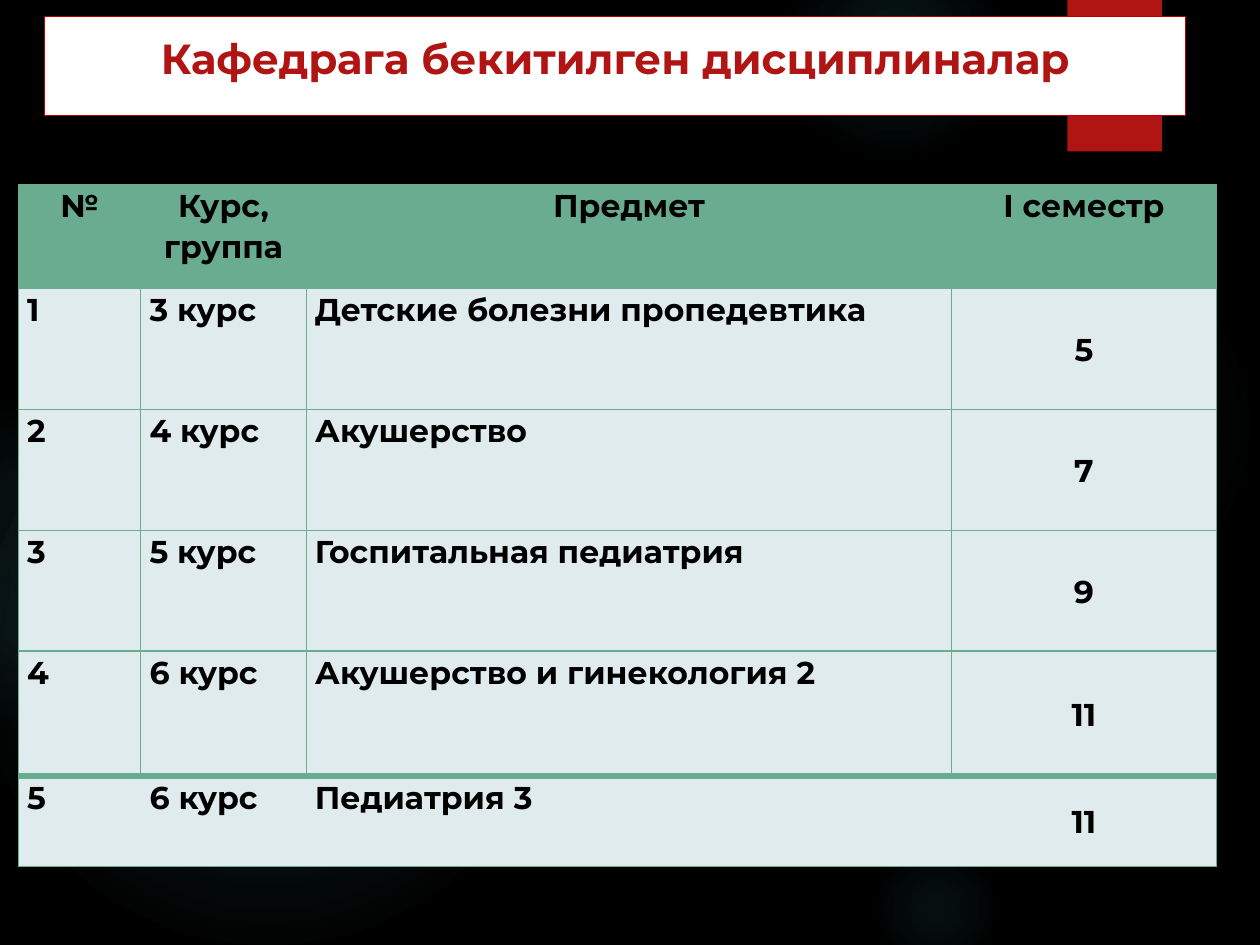
from dataclasses import dataclass

from lxml import etree
from pptx import Presentation
from pptx.dml.color import RGBColor
from pptx.enum.shapes import MSO_SHAPE
from pptx.enum.text import MSO_ANCHOR, MSO_AUTO_SIZE, PP_ALIGN
from pptx.oxml.ns import qn
from pptx.util import Pt

OVAL, RECT = MSO_SHAPE.OVAL, MSO_SHAPE.RECTANGLE
TOP, MIDDLE = MSO_ANCHOR.TOP, MSO_ANCHOR.MIDDLE
LEFT, CENTER = PP_ALIGN.LEFT, PP_ALIGN.CENTER
TITLE_ONLY = 5
NO_STYLE = "{2D5ABB26-0587-4C30-8999-92F81FD0307C}"


@dataclass(frozen=True)
class Theme:
    """Colours, font and type sizes of the slide."""
    back: str = "000000"
    glow: str = "50B9C1"
    red: str = "B01513"
    frame: str = "C00000"
    white: str = "FFFFFF"
    ink: str = "000000"
    green: str = "6AAC90"
    pale: str = "DFEBEC"
    font: str = "Montserrat"
    title_size: float = 24
    cell_size: float = 18
    thin: float = 0.75
    thick: float = 4


T = Theme()

GLOWS = [
    (496, 132, 222, [(0, 7), (36, 6), (69, 0)]),
    (448, -36, 126, [(0, 14), (36, 7), (73, 0)]),
    (496, 480, 78, [(0, 9), (36, 5), (66, 0)]),
    (-12, 210, 330, [(0, 11), (36, 10), (75, 0)]),
    (-66, 228, 186, [(0, 8), (36, 8), (72, 0)]),
]
COLS = [70, 94.5, 369, 151]
ROWS = [59.5, 69, 69, 69, 71.5, 51.5]
SUBJECTS = [
    ("№", "Курс, группа", "Предмет", "I семестр"),
    ("1", "3 курс", "Детские болезни пропедевтика", "5"),
    ("2", "4 курс", "Акушерство", "7"),
    ("3", "5 курс", "Госпитальная педиатрия", "9"),
    ("4", "6 курс", "Акушерство и гинекология 2", "11"),
    ("5", "6 курс", "Педиатрия 3", "11"),
]


def rgb(value):
    """Turn a hex string into a colour."""
    return RGBColor.from_string(value)


def add_solid(parent, tag, color):
    """Append a colour under a new element and return the colour element."""
    holder = etree.SubElement(parent, qn(tag))
    clr = etree.SubElement(holder, qn("a:srgbClr"))
    clr.set("val", color)
    return holder, clr


def add_shape(s, kind, left, top, width, height, color):
    """Add a flat shape without outline or shadow."""
    sp = s.shapes.add_shape(kind, Pt(left), Pt(top), Pt(width), Pt(height))
    sp.shadow.inherit = False
    sp.fill.solid()
    sp.fill.fore_color.rgb = rgb(color)
    sp.line.fill.background()
    return sp


def add_glow(s, left, top, size, stops):
    """Add a round light that fades towards its edge."""
    sp = add_shape(s, OVAL, left, top, size, size, T.glow)
    grad = etree.Element(qn("a:gradFill"))
    stop_list = etree.SubElement(grad, qn("a:gsLst"))
    for position, opacity in stops:
        stop, clr = add_solid(stop_list, "a:gs", T.glow)
        stop.set("pos", str(position * 1000))
        etree.SubElement(clr, qn("a:alpha")).set("val", str(opacity * 1000))
    radial = etree.SubElement(grad, qn("a:path"))
    radial.set("path", "circle")
    center = etree.SubElement(radial, qn("a:fillToRect"))
    for side in "ltrb":
        center.set(side, "50000")
    sp_pr = sp.element.spPr
    sp_pr.replace(sp_pr.find(qn("a:solidFill")), grad)


def add_text(tf, text, size, color, align):
    """Write one bold run into the first paragraph."""
    tf.word_wrap = True
    p = tf.paragraphs[0]
    p.alignment = align
    r = p.add_run()
    r.text = text
    r.font.name = T.font
    r.font.size = Pt(size)
    r.font.bold = True
    r.font.color.rgb = rgb(color)
    return p


def add_title(s, text):
    """Format the title placeholder as a framed panel in front."""
    sp = s.shapes.title
    sp.left, sp.top, sp.width, sp.height = Pt(25.5), Pt(9.5), Pt(652), Pt(56.5)
    sp.fill.solid()
    sp.fill.fore_color.rgb = rgb(T.white)
    sp.line.color.rgb = rgb(T.frame)
    sp.line.width = Pt(T.thin)
    tf = sp.text_frame
    tf.auto_size = MSO_AUTO_SIZE.NONE
    tf.vertical_anchor = TOP
    tf.margin_top = Pt(9)
    add_text(tf, text, T.title_size, T.red, CENTER)
    sp.element.getparent().append(sp.element)


def set_borders(cell, widths):
    """Draw the given cell sides, named L, R, T and B in that order."""
    tc_pr = cell._tc.get_or_add_tcPr()
    for index, (side, width) in enumerate(widths.items()):
        ln = etree.Element(qn(f"a:ln{side}"))
        ln.set("w", str(Pt(width)))
        add_solid(ln, "a:solidFill", T.green)
        tc_pr.insert(index, ln)


def border_widths(row, col):
    """Give the line widths for a cell; the last row has no inner verticals."""
    last_row, last_col = len(ROWS) - 1, len(COLS) - 1
    widths = {}
    if row < last_row or col == 0:
        widths["L"] = T.thin
    if row < last_row or col == last_col:
        widths["R"] = T.thin
    widths["T"] = T.thick if row == last_row else T.thin
    widths["B"] = T.thick if row == last_row - 1 else T.thin
    return widths


def fill_cell(cell, row, col, text):
    """Write and format one table cell."""
    head, number = row == 0, col == len(COLS) - 1
    cell.margin_left = cell.margin_right = Pt(5)
    cell.margin_top = cell.margin_bottom = 0
    cell.vertical_anchor = MIDDLE if number and not head else TOP
    cell.fill.solid()
    cell.fill.fore_color.rgb = rgb(T.green if head else T.pale)
    align = CENTER if head or number else LEFT
    p = add_text(cell.text_frame, text, T.cell_size, T.ink, align)
    p.line_spacing = 1.07
    set_borders(cell, border_widths(row, col))


def add_subject_table(s, left, top):
    """Add the table of subjects by course."""
    frame = s.shapes.add_table(len(ROWS), len(COLS), Pt(left), Pt(top),
                               Pt(sum(COLS)), Pt(sum(ROWS)))
    table = frame.table
    table.first_row = table.horz_banding = False
    next(frame.element.iter(qn("a:tableStyleId"))).text = NO_STYLE
    for column, width in zip(table.columns, COLS):
        column.width = Pt(width)
    for row, (height, texts) in enumerate(zip(ROWS, SUBJECTS)):
        table.rows[row].height = Pt(height)
        for col, text in enumerate(texts):
            fill_cell(table.cell(row, col), row, col, text)


def main():
    """Build the slide and save it."""
    prs = Presentation()
    prs.slide_width, prs.slide_height = Pt(720), Pt(540)
    s = prs.slides.add_slide(prs.slide_layouts[TITLE_ONLY])
    s.background.fill.solid()
    s.background.fill.fore_color.rgb = rgb(T.back)
    for glow in GLOWS:
        add_glow(s, *glow)
    add_shape(s, RECT, 610, 0, 54, 86.5, T.red)
    add_title(s, "Кафедрага бекитилген дисциплиналар")
    add_subject_table(s, 10.5, 105.5)
    prs.save("out.pptx")


if __name__ == "__main__":
    main()
